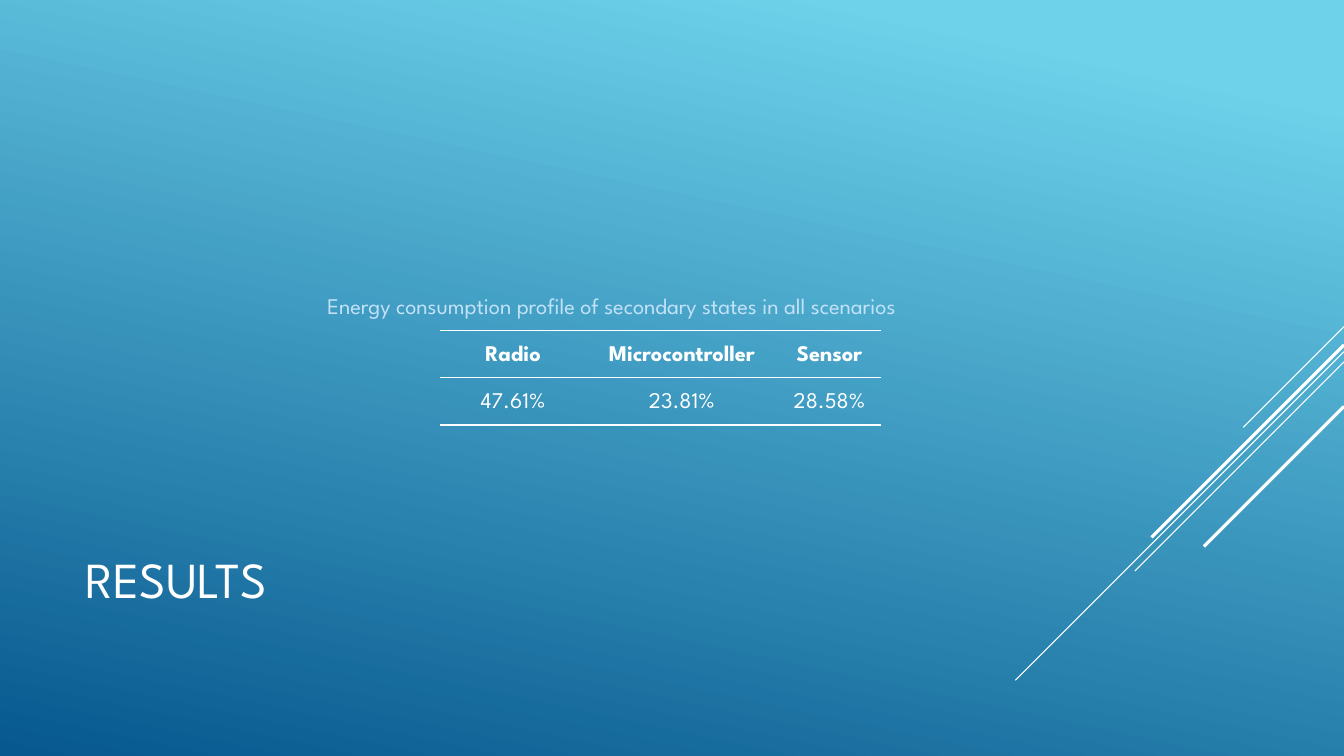
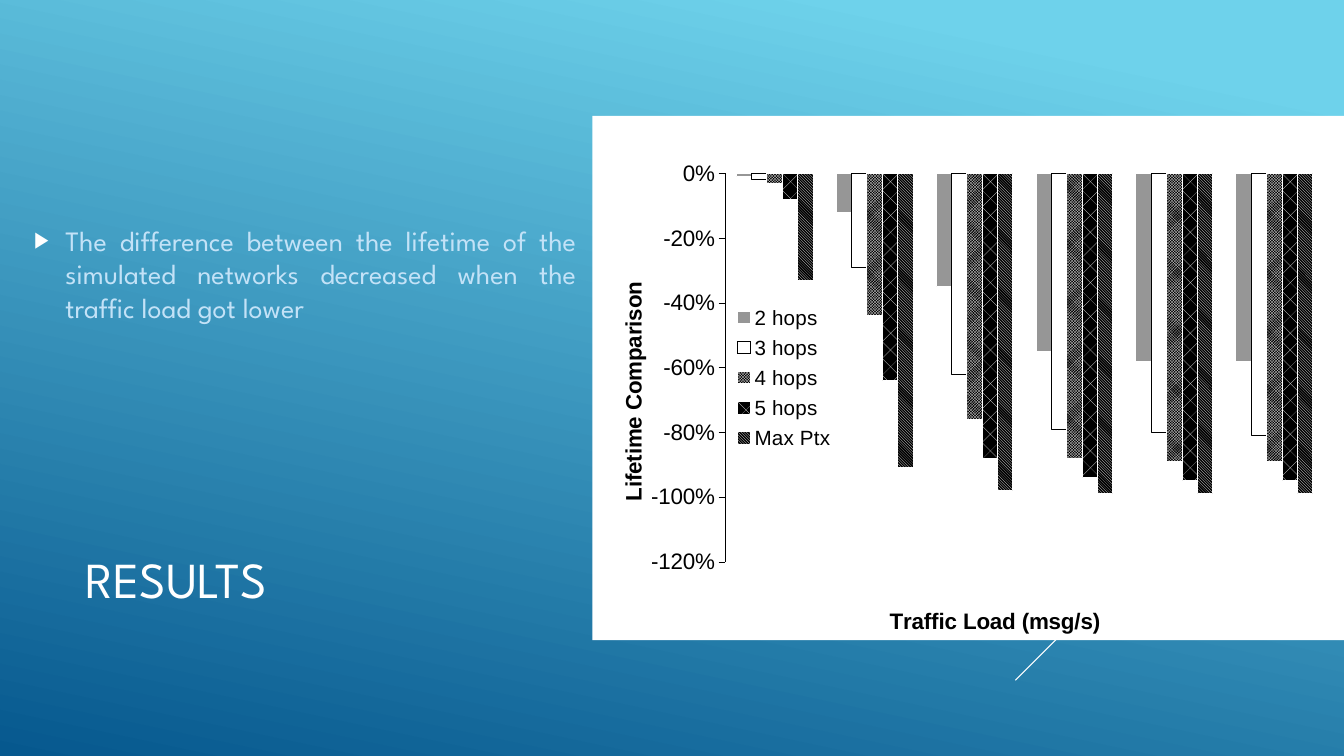
from dataclasses import dataclass

from lxml import etree
from pptx import Presentation
from pptx.chart.data import CategoryChartData
from pptx.dml.color import RGBColor
from pptx.enum.chart import XL_CHART_TYPE, XL_LEGEND_POSITION, XL_TICK_LABEL_POSITION, XL_TICK_MARK
from pptx.enum.dml import MSO_PATTERN
from pptx.enum.shapes import MSO_CONNECTOR
from pptx.enum.text import MSO_ANCHOR, PP_ALIGN
from pptx.oxml import parse_xml
from pptx.oxml.ns import nsdecls, qn
from pptx.util import Cm, Pt

MIDDLE = MSO_ANCHOR.MIDDLE
LEFT, CENTER, JUSTIFY = PP_ALIGN.LEFT, PP_ALIGN.CENTER, PP_ALIGN.JUSTIFY
NO_TICK, TICK_OUT = XL_TICK_MARK.NONE, XL_TICK_MARK.OUTSIDE
NO_LABELS = XL_TICK_LABEL_POSITION.NONE
CHECKER = MSO_PATTERN.SMALL_CHECKER_BOARD
DIAMOND = MSO_PATTERN.DOTTED_DIAMOND
DIAGONAL = MSO_PATTERN.DARK_DOWNWARD_DIAGONAL
NO_TABLE_STYLE = "{2D5ABB26-0587-4C30-8999-92F81FD0307C}"
TITLE_ONLY = 5


@dataclass(frozen=True)
class Theme:
    white: RGBColor = RGBColor.from_string("FFFFFF")
    black: RGBColor = RGBColor.from_string("000000")
    gray: RGBColor = RGBColor.from_string("969696")
    pale: RGBColor = RGBColor.from_string("C3E2F7")
    sky: RGBColor = RGBColor.from_string("6ED2EB")
    deep: RGBColor = RGBColor.from_string("06588E")
    font: str = "League Spartan"
    chart_font: str = "Arial"
    title: float = 36
    body: float = 20
    small: float = 16
    axis: float = 16
    legend: float = 14.7


THEME = Theme()
SLIDE_W, SLIDE_H = 33.87, 19.05
TITLE_BOX = (1.9, 12.47, 23.7, 4.19)

# Diagonal rays from the right edge: start height, run (cm), weight (pt)
RAYS = [(8.23, 2.54, 0.75), (8.86, 8.28, 0.75), (9.12, 5.27, 0.75),
        (8.69, 4.85, 2.25), (10.24, 3.53, 2.25)]

PROFILE = [("Radio", "Microcontroller", "Sensor"),
           ("47.61%", "23.81%", "28.58%")]

# Series name, values, solid colour or pattern, outline
LIFETIMES = [
    ("2 hops", (-0.01, -0.12, -0.35, -0.55, -0.58, -0.58), THEME.gray, THEME.white),
    ("3 hops", (-0.02, -0.29, -0.62, -0.79, -0.8, -0.81), THEME.white, THEME.black),
    ("4 hops", (-0.03, -0.44, -0.76, -0.88, -0.89, -0.89), CHECKER, THEME.white),
    ("5 hops", (-0.08, -0.64, -0.88, -0.94, -0.95, -0.95), DIAMOND, THEME.white),
    ("Max Ptx", (-0.33, -0.91, -0.98, -0.99, -0.99, -0.99), DIAGONAL, THEME.white),
]


def lengths(box):
    return [Cm(value) for value in box]


def style_font(font, size, color, name=THEME.font, bold=False):
    font.name, font.size, font.bold = name, Pt(size), bold
    font.color.rgb = color


def add_run(paragraph, text, size, color, align=LEFT, **style):
    paragraph.alignment = align
    run = paragraph.add_run()
    run.text = text
    style_font(run.font, size, color, **style)


def add_text_box(slide, box):
    frame = slide.shapes.add_textbox(*lengths(box)).text_frame
    frame.word_wrap = True
    frame.vertical_anchor = MIDDLE
    return frame


# Shared look
def paint_background(master):
    fill = master.background.fill
    fill.gradient()
    fill.gradient_angle = 360 - 102
    for stop, position, color in zip(fill.gradient_stops, (0.1, 1), (THEME.sky, THEME.deep)):
        stop.position = position
        stop.color.rgb = color


def add_rays(slide):
    for top, run, weight in RAYS:
        ray = slide.shapes.add_connector(
            MSO_CONNECTOR.STRAIGHT, *lengths((SLIDE_W, top, SLIDE_W - run, top + run)))
        ray.line.color.rgb = THEME.white
        ray.line.width = Pt(weight)
        etree.SubElement(ray._element.spPr, qn("a:effectLst"))


def add_results_slide(prs):
    slide = prs.slides.add_slide(prs.slide_layouts[TITLE_ONLY])
    add_rays(slide)
    title = slide.shapes.title
    title.left, title.top, title.width, title.height = lengths(TITLE_BOX)
    title.text_frame.vertical_anchor = MIDDLE
    add_run(title.text_frame.paragraphs[0], "RESULTS", THEME.title, THEME.white)
    return slide


# Energy profile table
def add_border(cell, sides):
    properties = cell._tc.get_or_add_tcPr()
    for index, side in enumerate(sides):
        properties.insert(index, parse_xml(
            f'<a:{side} {nsdecls("a")} w="{Pt(1)}"><a:solidFill>'
            f'<a:srgbClr val="{THEME.white}"/></a:solidFill></a:{side}>'))


def add_profile_table(slide, left, top, widths, row_height):
    table = slide.shapes.add_table(
        len(PROFILE), len(widths),
        *lengths((left, top, sum(widths), row_height * len(PROFILE)))).table
    table.horz_banding = False
    table._tbl.tblPr.find(qn("a:tableStyleId")).text = NO_TABLE_STYLE
    for column, width in zip(table.columns, widths):
        column.width = Cm(width)
    for row_index, row in enumerate(PROFILE):
        table.rows[row_index].height = Cm(row_height)
        header = row_index == 0
        for column_index, text in enumerate(row):
            cell = table.cell(row_index, column_index)
            cell.fill.background()
            cell.vertical_anchor = MIDDLE
            cell.margin_left = cell.margin_right = Cm(0.18)
            cell.margin_top = cell.margin_bottom = 0
            paragraph = cell.text_frame.paragraphs[0]
            paragraph.line_spacing = Pt(17)
            add_run(paragraph, text, THEME.small, THEME.white, CENTER, bold=header)
            add_border(cell, ("lnT", "lnB"))


def add_caption(slide, box):
    frame = add_text_box(slide, box)
    add_run(frame.paragraphs[0],
            "Energy consumption profile of secondary states in all scenarios",
            THEME.small, THEME.pale)


# Finding beside the chart
def add_finding(slide, box):
    paragraph = add_text_box(slide, box).paragraphs[0]
    properties = paragraph._p.get_or_add_pPr()
    indent = Cm(0.79)
    properties.set("marL", str(indent))
    properties.set("indent", str(-indent))
    for bullet in (f'<a:buClr {nsdecls("a")}><a:srgbClr val="{THEME.white}"/></a:buClr>',
                   f'<a:buSzPct {nsdecls("a")} val="80000"/>',
                   f'<a:buFont {nsdecls("a")} typeface="Arial"/>',
                   f'<a:buChar {nsdecls("a")} char="▶"/>'):
        properties.append(parse_xml(bullet))
    paragraph.space_after = Pt(6)
    add_run(paragraph,
            "The difference between the lifetime of the simulated networks "
            "decreased when the traffic load got lower",
            THEME.body, THEME.pale, JUSTIFY)


# Lifetime chart
def place_part(part, index, x, y, w=None, h=None, inner=False):
    """Give a chart part a manual layout, in fractions of the chart."""
    for old in part.findall(qn("c:layout")):
        part.remove(old)
    settings = [("layoutTarget", "inner" if inner else None),
                ("xMode", "edge"), ("yMode", "edge"),
                ("x", x), ("y", y), ("w", w), ("h", h)]
    body = "".join(f'<c:{tag} val="{value}"/>' for tag, value in settings if value is not None)
    part.insert(index, parse_xml(
        f'<c:layout {nsdecls("c")}><c:manualLayout>{body}</c:manualLayout></c:layout>'))


def add_axis_title(axis, text, x, y, rotation=0):
    frame = axis.axis_title.text_frame
    frame._txBody.bodyPr.set("rot", str(rotation * 60000))
    add_run(frame.paragraphs[0], text, THEME.axis, THEME.black, CENTER,
            name=THEME.chart_font, bold=True)
    place_part(axis.axis_title._element, 1, x, y)


def style_series(series, paint, outline):
    series.invert_if_negative = False
    fill = series.format.fill
    if isinstance(paint, RGBColor):
        fill.solid()
        fill.fore_color.rgb = paint
    else:
        fill.patterned()
        fill.pattern = paint
        fill.fore_color.rgb = THEME.white
        fill.back_color.rgb = THEME.black
    series.format.line.color.rgb = outline
    series.format.line.width = Pt(0.75)


def add_lifetime_chart(slide, box):
    data = CategoryChartData(number_format="0%")
    data.categories = [str(load) for load in range(1, 7)]
    for name, values, _, _ in LIFETIMES:
        data.add_series(name, values)
    chart = slide.shapes.add_chart(XL_CHART_TYPE.COLUMN_CLUSTERED, *lengths(box), data).chart
    chart.has_title = False
    style_font(chart.font, THEME.axis, THEME.black, THEME.chart_font)
    chart_xml = chart._chartSpace.find(qn("c:chart"))
    chart_xml.addnext(parse_xml(
        f'<c:spPr {nsdecls("c", "a")}><a:solidFill><a:srgbClr val="{THEME.white}"/>'
        '</a:solidFill><a:ln><a:noFill/></a:ln></c:spPr>'))
    place_part(chart_xml.find(qn("c:plotArea")), 0, 0.176, 0.11, 0.798, 0.741, inner=True)

    plot = chart.plots[0]
    plot.vary_by_categories = False
    plot.gap_width, plot.overlap = 150, 0
    for series, (_, _, paint, outline) in zip(plot.series, LIFETIMES):
        style_series(series, paint, outline)

    loads = chart.category_axis
    loads.major_tick_mark = loads.minor_tick_mark = NO_TICK
    loads.tick_label_position = NO_LABELS
    loads.format.line.fill.background()
    add_axis_title(loads, "Traffic Load (msg/s)", 0.39, 0.93)

    change = chart.value_axis
    change.minimum_scale, change.maximum_scale, change.major_unit = -1.2, 0, 0.2
    change.has_major_gridlines = False
    change.major_tick_mark, change.minor_tick_mark = TICK_OUT, NO_TICK
    change.tick_labels.number_format = "0%"
    change.tick_labels.number_format_is_linked = False
    style_font(change.tick_labels.font, THEME.axis, THEME.black, THEME.chart_font)
    change.format.line.color.rgb = THEME.black
    change.format.line.width = Pt(0.25)
    add_axis_title(change, "Lifetime Comparison", 0.03, 0.31, rotation=-90)

    chart.has_legend = True
    legend = chart.legend
    legend.position = XL_LEGEND_POSITION.RIGHT
    legend.include_in_layout = True
    style_font(legend.font, THEME.legend, THEME.black, THEME.chart_font)
    place_part(legend._element, 1, 0.18, 0.35, 0.15, 0.3)


def main():
    prs = Presentation()
    prs.slide_width, prs.slide_height = lengths((SLIDE_W, SLIDE_H))
    paint_background(prs.slide_master)

    profile = add_results_slide(prs)
    add_profile_table(profile, 11.1, 8.33, (3.66, 4.85, 2.59), 1.19)
    add_caption(profile, (8, 7.19, 17.88, 1.02))

    lifetime = add_results_slide(prs)
    add_finding(lifetime, (0.61, 1.88, 14.17, 10.03))
    add_lifetime_chart(lifetime, (14.93, 2.92, SLIDE_W - 14.93, 13.23))
    prs.save("out.pptx")


if __name__ == "__main__":
    main()
